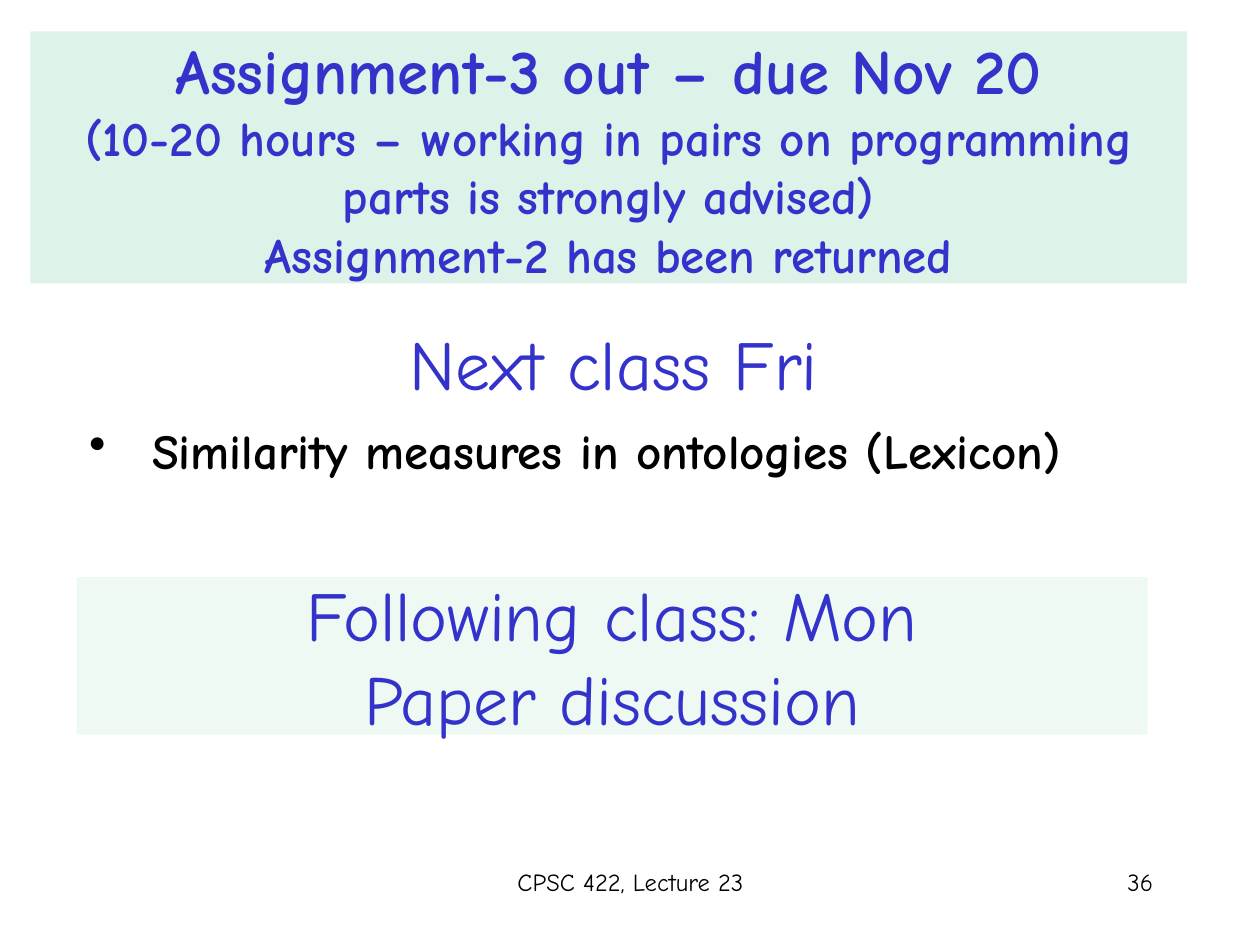
import pptx
import pptx.util
import pptx.dml.color
import pptx.enum.shapes
import pptx.enum.text
import lxml.etree

Inches = pptx.util.Inches
Align = pptx.enum.text.PP_ALIGN
Anchor = pptx.enum.text.MSO_ANCHOR
FONT = "Comic Neue"
BLUE = "3333CC"
BLACK = "000000"


def tint(color, value):
    color.rgb = pptx.dml.color.RGBColor.from_string(value)


def write(frame, lines, color, bold=False, align=Align.CENTER, anchor=Anchor.MIDDLE):
    frame.word_wrap = True
    frame.auto_size = pptx.enum.text.MSO_AUTO_SIZE.NONE
    frame.vertical_anchor = anchor
    for i, (text, size) in enumerate(lines):
        para = frame.add_paragraph() if i else frame.paragraphs[0]
        para.alignment = align
        run = para.add_run()
        run.text = text
        run.font.name = FONT
        run.font.size = pptx.util.Pt(size)
        run.font.bold = bold
        tint(run.font.color, color)


def add_title(slide, box, text):
    title = slide.shapes.title
    title.left, title.top, title.width, title.height = map(Inches, box)
    write(title.text_frame, [(text, 40)], BLUE)


def add_panel(slide, box, fill, lines, bold=False):
    panel = slide.shapes.add_shape(
        pptx.enum.shapes.MSO_SHAPE.RECTANGLE, *map(Inches, box))
    panel.shadow.inherit = False
    panel.fill.solid()
    tint(panel.fill.fore_color, fill)
    panel.line.fill.background()
    write(panel.text_frame, lines, BLUE, bold)


def add_topic(slide, box, text):
    frame = slide.shapes.add_textbox(*map(Inches, box)).text_frame
    frame.margin_top = Inches(0.59)
    write(frame, [(text, 28)], BLACK, True, Align.LEFT, Anchor.TOP)
    props = frame.paragraphs[0]._p.get_or_add_pPr()
    props.set("marL", str(Inches(0.5)))
    props.set("indent", str(Inches(-0.5)))
    mark = lxml.etree.SubElement(props, pptx.oxml.ns.qn("a:buChar"))
    mark.set("char", "•")


def add_note(slide, box, text, align):
    frame = slide.shapes.add_textbox(*map(Inches, box)).text_frame
    write(frame, [(text, 14)], BLACK, align=align, anchor=Anchor.TOP)


def main():
    deck = pptx.Presentation()
    deck.slide_width, deck.slide_height = Inches(10), Inches(7.5)
    slide = deck.slides.add_slide(deck.slide_layouts[5])
    add_title(slide, (0.62, 2.25, 8.5, 1.25), "Next class Fri")
    add_topic(slide, (0.61, 2.75, 8.99, 4.44),
              "Similarity measures in ontologies (Lexicon)")
    add_note(slide, (3.42, 6.83, 3.17, 0.5), "CPSC 422, Lecture 23", Align.CENTER)
    add_note(slide, (7.17, 6.83, 2.08, 0.5), "36", Align.RIGHT)
    add_panel(slide, (0.24, 0.25, 9.18, 2), "DDF3EA", [
        ("Assignment-3 out – due Nov 20", 36),
        ("(10-20 hours – working in pairs on programming parts is strongly advised)", 28),
        ("Assignment-2 has been returned", 28),
    ], bold=True)
    add_panel(slide, (0.61, 4.58, 8.5, 1.25), "EEF9F4", [
        ("Following class: Mon", 40),
        ("Paper discussion", 40),
    ])
    deck.save("out.pptx")


if __name__ == "__main__":
    main()
